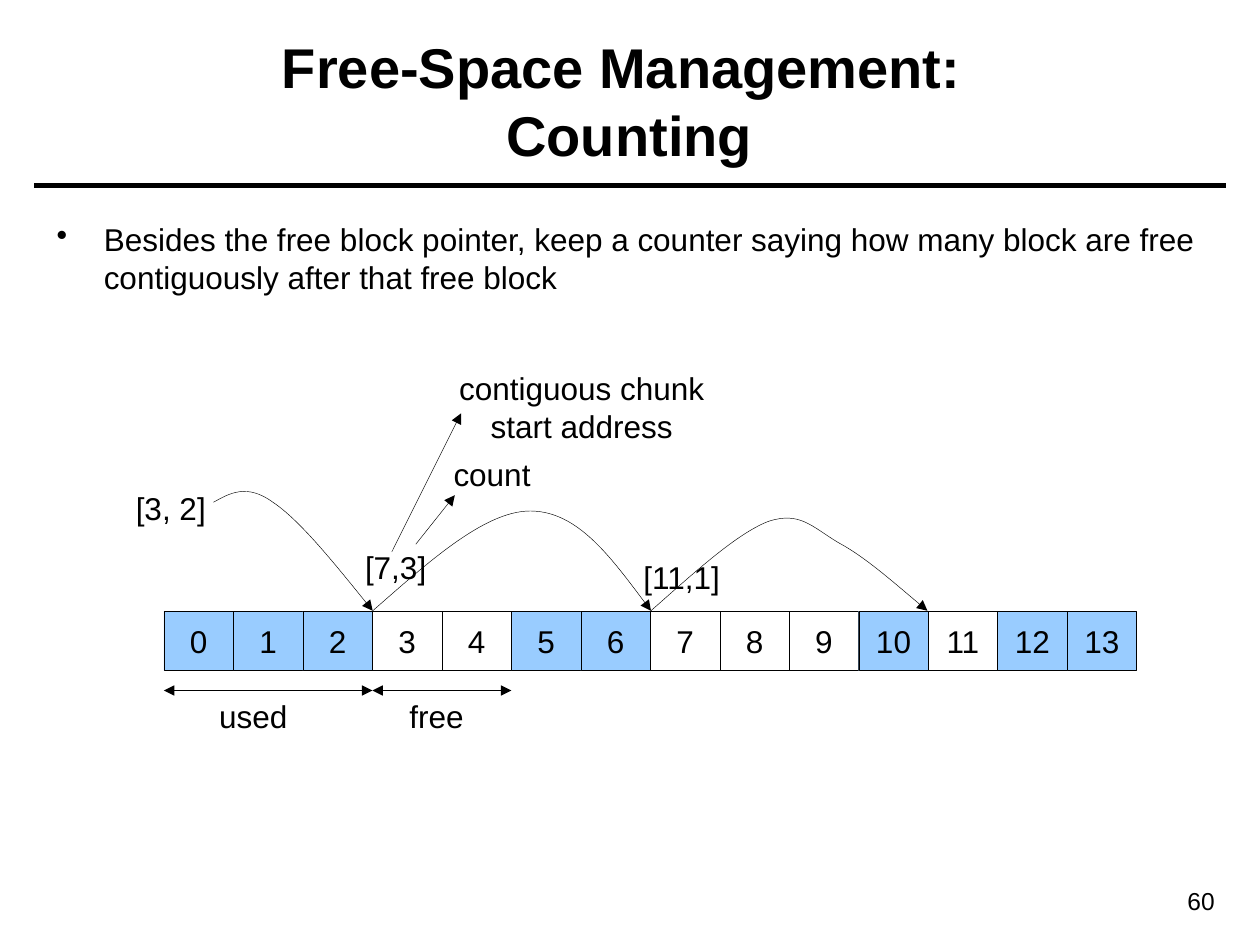
"""Build the slide on free-space management by counting."""
from dataclasses import dataclass

from lxml import etree
from pptx import Presentation, util as u
from pptx.dml.color import RGBColor
from pptx.enum import shapes, text
from pptx.oxml import ns

INK, USED_FILL = "000000", "99CCFF"
BLOCKS_LEFT, BLOCKS_TOP, BLOCK_WIDTH, BLOCK_HEIGHT = 93.7, 349.2, 39.7, 34
BLOCK_COUNT, USED_BLOCKS = 14, {0, 1, 2, 5, 6, 10, 12, 13}
HAIRLINE = 0.25
SPAN_TOP = 394.6


@dataclass
class Label:
    words: str
    left: float
    top: float
    width: float
    height: float = 28.8
    wrap: bool = False
    size: float = 18
    align: text.PP_ALIGN = text.PP_ALIGN.CENTER


@dataclass
class Arrow:
    start: tuple[float, float]
    end: tuple[float, float]
    width: float = HAIRLINE
    ends: tuple[str, ...] = ("tailEnd",)


def block_left(number: int) -> float:
    return BLOCKS_LEFT + number * BLOCK_WIDTH


def colour(value: str) -> RGBColor:
    return RGBColor.from_string(value)


def apply_format(target, values: dict) -> None:
    for name, value in values.items():
        setattr(target, name, value)


def write(frame, words: str, size: float = 18, bold: bool = False,
          align=text.PP_ALIGN.CENTER, anchor=text.MSO_ANCHOR.TOP, wrap: bool = True):
    apply_format(frame, {"text": words, "word_wrap": wrap, "vertical_anchor": anchor,
                         "auto_size": text.MSO_AUTO_SIZE.NONE})
    paragraph = frame.paragraphs[0]
    paragraph.alignment = align
    for run in paragraph.runs:
        apply_format(run.font, {"name": "Arial", "size": u.Pt(size), "bold": bold})
        run.font.color.rgb = colour(INK)
    return paragraph


def place(shape, left: float, top: float, width: float, height: float) -> None:
    apply_format(shape, {"left": u.Pt(left), "top": u.Pt(top),
                         "width": u.Pt(width), "height": u.Pt(height)})


def style_line(shape, width: float, ends: tuple[str, ...] = ()) -> None:
    shape.line.color.rgb = colour(INK)
    shape.line.width = u.Pt(width)
    line = shape.line._get_or_add_ln()
    for end in ends:
        etree.SubElement(line, ns.qn(f"a:{end}"), type="triangle")


def draw_arrow(slide, arrow: Arrow) -> None:
    points = [u.Pt(value) for value in (*arrow.start, *arrow.end)]
    connector = slide.shapes.add_connector(shapes.MSO_CONNECTOR.STRAIGHT, *points)
    style_line(connector, arrow.width, arrow.ends)
    etree.SubElement(connector._element.spPr, ns.qn("a:effectLst"))


def draw_label(slide, label: Label):
    box = slide.shapes.add_textbox(u.Pt(label.left), u.Pt(label.top),
                                   u.Pt(label.width), u.Pt(label.height))
    return write(box.text_frame, label.words, label.size, align=label.align, wrap=label.wrap)


def draw_block(slide, number: int) -> None:
    block = slide.shapes.add_shape(shapes.MSO_SHAPE.RECTANGLE, 0, 0, 0, 0)
    place(block, block_left(number), BLOCKS_TOP, BLOCK_WIDTH, BLOCK_HEIGHT)
    block.shadow.inherit = False
    if number in USED_BLOCKS:
        block.fill.solid()
        block.fill.fore_color.rgb = colour(USED_FILL)
    else:
        block.fill.background()
    style_line(block, HAIRLINE)
    write(block.text_frame, str(number), anchor=text.MSO_ANCHOR.MIDDLE, wrap=False)


def draw_jump(slide, points: list[tuple[float, float]]) -> None:
    builder = slide.shapes.build_freeform(*points[0], scale=u.Pt(1) / 1.0)
    builder.add_line_segments(points[1:], close=False)
    jump = builder.convert_to_shape()
    outline = jump._element.find(".//" + ns.qn("a:path"))
    segments = outline.findall(ns.qn("a:lnTo"))
    for first in range(0, len(segments), 3):
        curve = etree.SubElement(outline, ns.qn("a:cubicBezTo"))
        for segment in segments[first:first + 3]:
            curve.append(segment[0])
            outline.remove(segment)
    jump.shadow.inherit = False
    jump.fill.background()
    style_line(jump, HAIRLINE, ("tailEnd",))


def add_bullet(paragraph) -> None:
    paragraph.space_before = u.Pt(3.6)
    properties = paragraph._p.get_or_add_pPr()
    properties.set("marL", str(u.Pt(27)))
    properties.set("indent", str(u.Pt(-27)))
    etree.SubElement(properties, ns.qn("a:buChar"), char="•")


def main() -> None:
    deck = Presentation()
    apply_format(deck, {"slide_width": u.Pt(720), "slide_height": u.Pt(540)})
    slide = deck.slides.add_slide(deck.slide_layouts[5])
    title = slide.shapes.title
    place(title, 25.2, 12.2, 668.9, 90)
    write(title.text_frame, "Free-Space Management: \vCounting", 32, True,
          anchor=text.MSO_ANCHOR.MIDDLE)
    draw_arrow(slide, Arrow((19.6, 105.8), (700.4, 105.8), 3, ()))

    statement = Label("Besides the free block pointer, keep a counter saying how many block "
                      "are free contiguously after that free block",
                      25.2, 122.4, 668.9, 368.6, wrap=True, align=text.PP_ALIGN.LEFT)
    add_bullet(draw_label(slide, statement))

    for number in range(BLOCK_COUNT):
        draw_block(slide, number)

    first_free, second_free, third_free = ((block_left(n), BLOCKS_TOP) for n in (3, 7, 11))
    jumps = [
        [(121.7, 287.3), (131, 281.5), (141.1, 276.5), (156.2, 287.3),
         (171.4, 297.4), (191.5, 323.3), first_free],
        [first_free, (244.8, 321.1), (277.2, 292.3), (303.1, 292.3),
         (329.8, 292.3), (350.6, 321.1), second_free],
        [second_free, (396.7, 326.9), (421.2, 304.6), (439.2, 298.1),
         (457.2, 291.6), (463.7, 301), (478.8, 309.6),
         (493.9, 318.2), (511.9, 334.1), third_free],
    ]
    for points in jumps:
        draw_jump(slide, points)

    both_ends = ("headEnd", "tailEnd")
    arrows = [
        Arrow((237.6, 311), (259.9, 283)),
        Arrow((223.9, 315.4), (263.5, 236.2)),
        Arrow((block_left(0), SPAN_TOP), (block_left(3), SPAN_TOP), ends=both_ends),
        Arrow((block_left(3), SPAN_TOP), (block_left(5), SPAN_TOP), ends=both_ends),
    ]
    for arrow in arrows:
        draw_arrow(slide, arrow)

    labels = [
        Label("[3, 2]", 70.6, 275.8, 54),
        Label("[7,3]", 201.6, 309.6, 49),
        Label("[11,1]", 360, 315.4, 59),
        Label("count", 252, 256.3, 58.3),
        Label("contiguous chunk start address", 235.4, 207.4, 194, 50.4, wrap=True),
        Label("used ", 118.1, SPAN_TOP, 58.3),
        Label("free", 226.8, SPAN_TOP, 45.4),
        Label("60", 626.4, 502.6, 74.9, 24.5, wrap=True, size=14, align=text.PP_ALIGN.RIGHT),
    ]
    for label in labels:
        draw_label(slide, label)
    deck.save("out.pptx")


if __name__ == "__main__":
    main()
